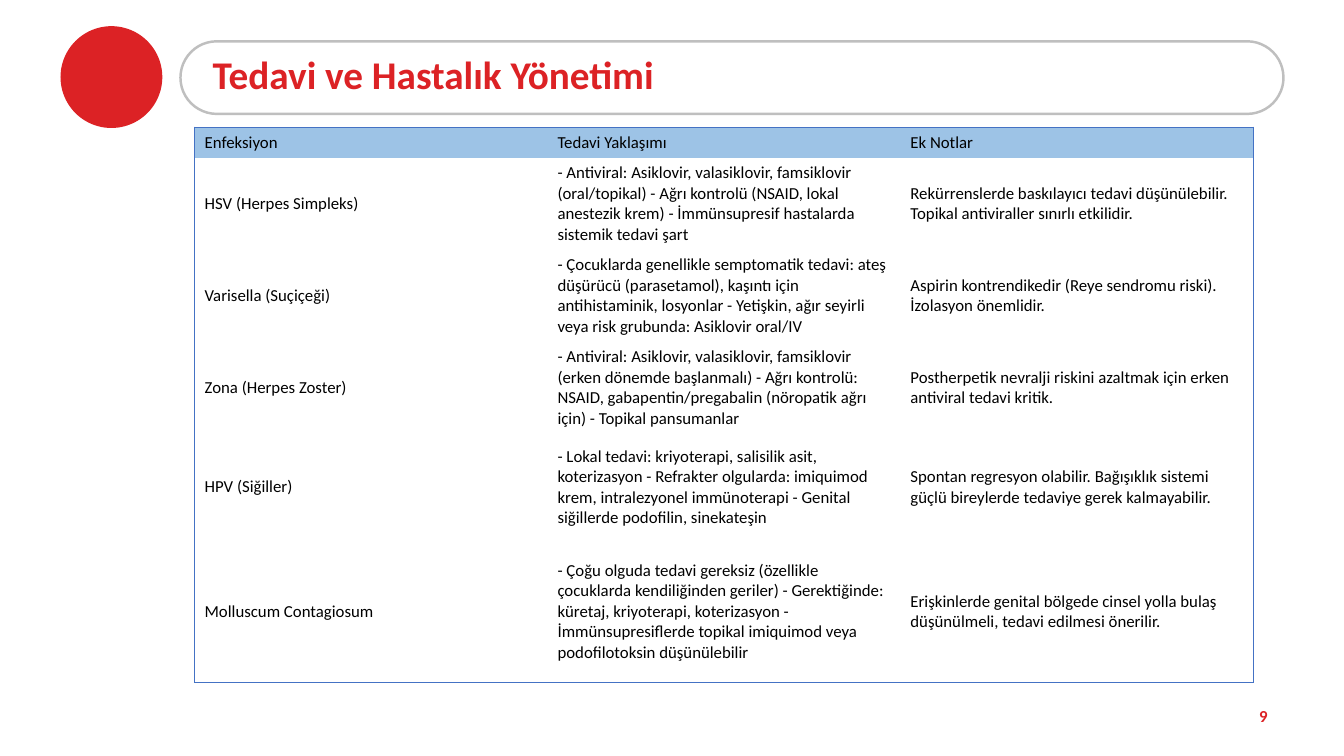
from lxml import etree
from pptx import Presentation
from pptx.dml.color import RGBColor
from pptx.enum.shapes import MSO_SHAPE
from pptx.enum.text import MSO_ANCHOR, MSO_AUTO_SIZE, PP_ALIGN
from pptx.oxml.ns import qn
from pptx.util import Inches, Pt

OVAL, PILL = MSO_SHAPE.OVAL, MSO_SHAPE.ROUNDED_RECTANGLE
MIDDLE = MSO_ANCHOR.MIDDLE
LEFT, CENTER = PP_ALIGN.LEFT, PP_ALIGN.CENTER
NO_AUTOFIT = MSO_AUTO_SIZE.NONE
TITLE_ONLY = 5

RED = RGBColor(0xDC, 0x22, 0x25)
GRAY = RGBColor(0xBF, 0xBF, 0xBF)
HEADER_BLUE = RGBColor(0x9D, 0xC3, 0xE6)
BORDER_BLUE = RGBColor(0x44, 0x72, 0xC4)
BLACK = RGBColor(0, 0, 0)
FONT = "Calibri"

COLUMN_WIDTH = 3.5
ROW_HEIGHTS = [0.3, 0.89, 0.89, 0.89, 1.06, 1.41]
TREATMENTS = [
    ("Enfeksiyon", "Tedavi Yaklaşımı", "Ek Notlar"),
    ("HSV (Herpes Simpleks)",
     "- Antiviral: Asiklovir, valasiklovir, famsiklovir (oral/topikal) "
     "- Ağrı kontrolü (NSAID, lokal anestezik krem) "
     "- İmmünsupresif hastalarda sistemik tedavi şart",
     "Rekürrenslerde baskılayıcı tedavi düşünülebilir. "
     "Topikal antiviraller sınırlı etkilidir."),
    ("Varisella (Suçiçeği)",
     "- Çocuklarda genellikle semptomatik tedavi: ateş düşürücü (parasetamol), "
     "kaşıntı için antihistaminik, losyonlar "
     "- Yetişkin, ağır seyirli veya risk grubunda: Asiklovir oral/IV",
     "Aspirin kontrendikedir (Reye sendromu riski). İzolasyon önemlidir."),
    ("Zona (Herpes Zoster)",
     "- Antiviral: Asiklovir, valasiklovir, famsiklovir (erken dönemde başlanmalı) "
     "- Ağrı kontrolü: NSAID, gabapentin/pregabalin (nöropatik ağrı için) "
     "- Topikal pansumanlar",
     "Postherpetik nevralji riskini azaltmak için erken antiviral tedavi kritik."),
    ("HPV (Siğiller)",
     "- Lokal tedavi: kriyoterapi, salisilik asit, koterizasyon "
     "- Refrakter olgularda: imiquimod krem, intralezyonel immünoterapi "
     "- Genital siğillerde podofilin, sinekateşin",
     "Spontan regresyon olabilir. Bağışıklık sistemi güçlü bireylerde "
     "tedaviye gerek kalmayabilir."),
    ("Molluscum Contagiosum",
     "- Çoğu olguda tedavi gereksiz (özellikle çocuklarda kendiliğinden geriler) "
     "- Gerektiğinde: küretaj, kriyoterapi, koterizasyon "
     "- İmmünsupresiflerde topikal imiquimod veya podofilotoksin düşünülebilir",
     "Erişkinlerde genital bölgede cinsel yolla bulaş düşünülmeli, "
     "tedavi edilmesi önerilir."),
]


def box(left, top, width, height):
    return Inches(left), Inches(top), Inches(width), Inches(height)


def format_paragraph(paragraph, size, color, bold=False, align=LEFT):
    paragraph.alignment = align
    font = paragraph.font
    font.name, font.size, font.bold = FONT, Pt(size), bold
    font.color.rgb = color


def add_banner(slide):
    circle = slide.shapes.add_shape(OVAL, *box(0.6, 0.26, 1.01, 1.01))
    circle.shadow.inherit = False
    circle.fill.solid()
    circle.fill.fore_color.rgb = RED
    circle.line.fill.background()

    frame = slide.shapes.add_shape(PILL, *box(1.79, 0.41, 10.94, 0.72))
    frame.shadow.inherit = False
    frame.adjustments[0] = 0.5
    frame.fill.background()
    frame.line.color.rgb = GRAY
    frame.line.width = Pt(1.75)


def set_title(slide, text):
    title = slide.shapes.title
    title.left, title.top, title.width, title.height = box(2.01, 0.49, 10.65, 0.55)
    title.text_frame.text = text
    title.text_frame.vertical_anchor = MIDDLE
    title.text_frame.auto_size = NO_AUTOFIT
    paragraph = title.text_frame.paragraphs[0]
    paragraph.line_spacing = 0.9
    format_paragraph(paragraph, 28, RED, bold=True)
    # Keep the title in front of the banner.
    slide.shapes._spTree.append(title._element)


def add_page_number(slide, number):
    frame = slide.shapes.add_textbox(*box(12.33, 6.7, 0.4, 0.8)).text_frame
    frame.word_wrap = True
    frame.vertical_anchor = MIDDLE
    frame.text = str(number)
    format_paragraph(frame.paragraphs[0], 12, RED, bold=True, align=CENTER)


def set_borders(cell, visible_sides):
    """Draw the given sides (of L, R, T, B) and hide the others."""
    properties = cell._tc.get_or_add_tcPr()
    for side in "LRTB":
        line = etree.SubElement(properties, qn(f"a:ln{side}"), w=str(Pt(0.5)))
        if side in visible_sides:
            fill = etree.SubElement(line, qn("a:solidFill"))
            etree.SubElement(fill, qn("a:srgbClr"), val=str(BORDER_BLUE))
        else:
            etree.SubElement(line, qn("a:noFill"))


def add_treatment_table(slide):
    row_count, column_count = len(TREATMENTS), len(TREATMENTS[0])
    area = box(1.93, 1.26, COLUMN_WIDTH * column_count, sum(ROW_HEIGHTS))
    table = slide.shapes.add_table(row_count, column_count, *area).table
    table.first_row = table.horz_banding = False
    for column in table.columns:
        column.width = Inches(COLUMN_WIDTH)
    for row_index, texts in enumerate(TREATMENTS):
        table.rows[row_index].height = Inches(ROW_HEIGHTS[row_index])
        for column_index, text in enumerate(texts):
            cell = table.cell(row_index, column_index)
            cell.text = text
            cell.vertical_anchor = MIDDLE
            format_paragraph(cell.text_frame.paragraphs[0], 12, BLACK)
            outer_edges = {"L": column_index == 0,
                           "R": column_index == column_count - 1,
                           "T": row_index == 0,
                           "B": row_index == row_count - 1}
            set_borders(cell, [side for side, outer in outer_edges.items() if outer])
            if row_index == 0:
                cell.fill.solid()
                cell.fill.fore_color.rgb = HEADER_BLUE
            else:
                cell.fill.background()


def main():
    presentation = Presentation()
    presentation.slide_width, presentation.slide_height = Inches(13.33), Inches(7.5)
    slide = presentation.slides.add_slide(presentation.slide_layouts[TITLE_ONLY])
    add_banner(slide)
    add_page_number(slide, 9)
    set_title(slide, "Tedavi ve Hastalık Yönetimi")
    add_treatment_table(slide)
    presentation.save("out.pptx")


if __name__ == "__main__":
    main()
